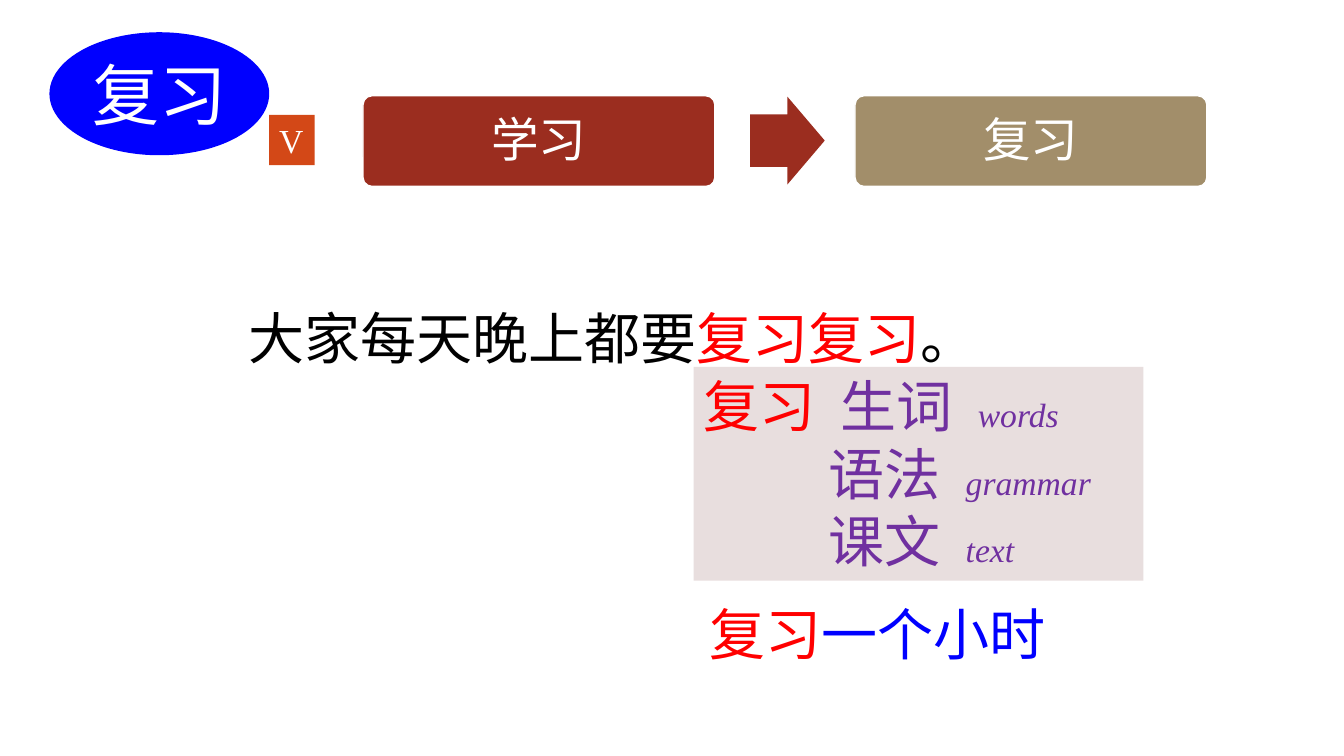
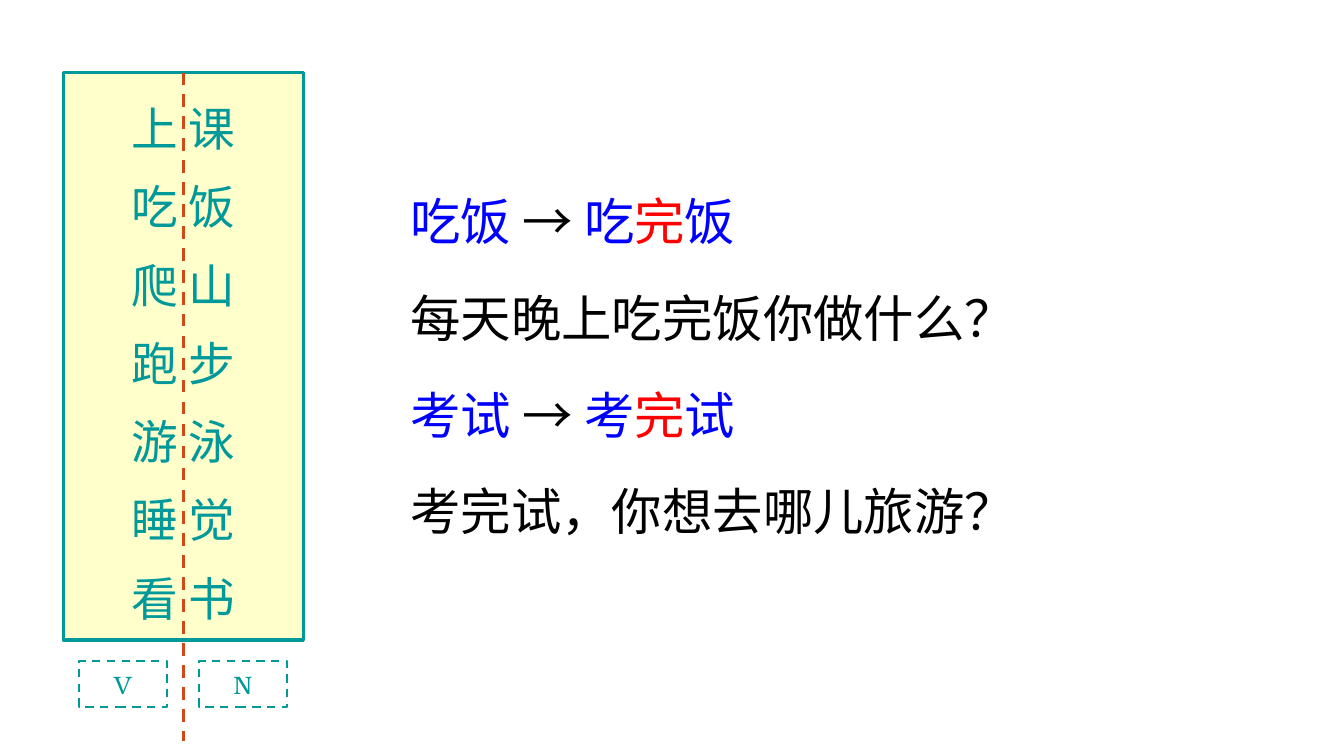
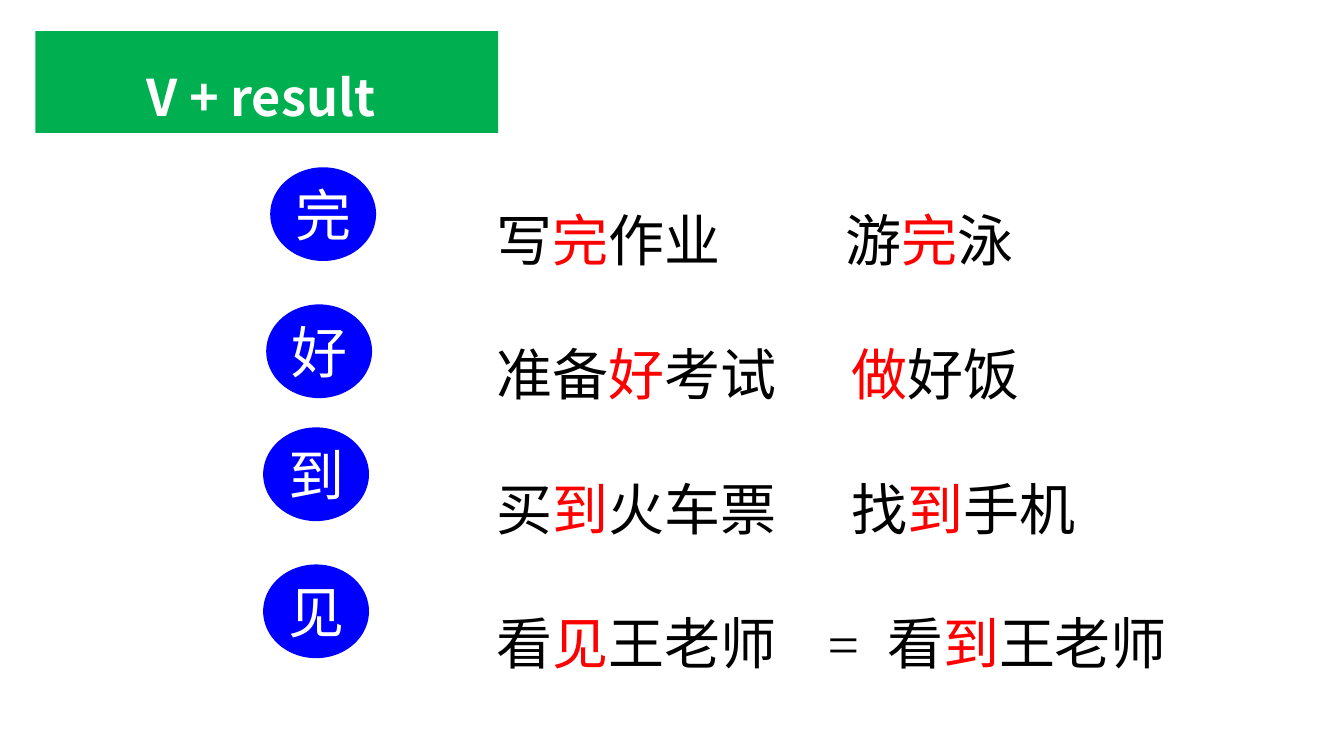
from lxml.etree import SubElement
from pptx import Presentation
from pptx.dml.color import RGBColor
from pptx.enum.dml import MSO_LINE_DASH_STYLE as Dash
from pptx.enum.shapes import MSO_CONNECTOR as Connector, MSO_SHAPE as Preset
from pptx.enum.text import MSO_ANCHOR as Anchor, MSO_AUTO_SIZE as AutoSize, PP_ALIGN as Align
from pptx.oxml.ns import qn
from pptx.util import Emu, Pt

PX = 9144
LINE_HEIGHT = 1.2
SANS, SERIF, ROMAN = "Noto Sans CJK SC", "Times New Roman", "TeX Gyre Bonum"
BLACK, WHITE, RED, BLUE, PURPLE = "000000", "FFFFFF", "FF0000", "0000FF", "7030A0"
BRICK, SAND, ORANGE, GREEN = "9B2D1F", "A28E6A", "D34817", "00B050"
ROSE, TEAL, CREAM = "E8DEDE", "009999", "FFFFCC"


def px(length):
    return Emu(length * PX)


def rgb(value):
    return RGBColor.from_string(value)


def move(shape, box):
    shape.left, shape.top, shape.width, shape.height = map(px, box)


def paint(shape, fill=None, line=None, weight=1, dash=None):
    if fill:
        shape.fill.solid()
        shape.fill.fore_color.rgb = rgb(fill)
    else:
        shape.fill.background()
    if line:
        shape.line.color.rgb = rgb(line)
        shape.line.width = Pt(weight)
        if dash:
            shape.line.dash_style = dash
    else:
        shape.line.fill.background()


def add_shape(page, preset, box, **look):
    shape = page.shapes.add_shape(preset, *map(px, box))
    shape.shadow.inherit = False
    paint(shape, **look)
    return shape


def add_text(page, box, lines, **style):
    write(page.shapes.add_textbox(*map(px, box)), lines, **style)


def add_span(para, text, color, size, font, bold=False, italic=False):
    span = para.add_run()
    span.text = text
    span.font.size = Pt(size)
    span.font.bold = bold
    span.font.italic = italic
    span.font.color.rgb = rgb(color)
    span.font.name = font
    SubElement(span.font._element, qn("a:ea"), typeface=SANS)


def clear_bullet(para):
    props = para._p.get_or_add_pPr()
    props.set("marL", "0")
    props.set("indent", "0")
    SubElement(props, qn("a:buNone"))


def set_tabs(para, stops):
    tabs = SubElement(para._p.get_or_add_pPr(), qn("a:tabLst"))
    for stop in stops:
        SubElement(tabs, qn("a:tab"), pos=str(px(stop)), algn="l")


def write(shape, lines, size=40, color=BLACK, font=SERIF, bold=False, align=Align.LEFT,
          anchor=Anchor.TOP, spacing=None, tabs=None, wrap=True):
    frame = shape.text_frame
    frame.auto_size = AutoSize.NONE
    frame.word_wrap = wrap
    frame.vertical_anchor = anchor
    frame.margin_left = frame.margin_right = px(10)
    frame.margin_top = frame.margin_bottom = px(5)
    for index, line in enumerate(lines):
        para = frame.add_paragraph() if index else frame.paragraphs[0]
        para.alignment = align
        para.space_before = para.space_after = Pt(0)
        if spacing:
            para.line_spacing = Pt(round(size * LINE_HEIGHT * spacing, 1))
        if shape.is_placeholder:
            clear_bullet(para)
        if tabs:
            set_tabs(para, tabs[index])
        for text, *extra in line:
            tint = extra[0] if extra else color
            small = extra[1] if len(extra) > 1 else None
            add_span(para, text, tint, small or size, font, bold, bool(small))


def label(shape, text, size, color=WHITE, font=SANS, spacing=None):
    write(shape, [[(text,)]], size=size, color=color, font=font, spacing=spacing,
          align=Align.CENTER, anchor=Anchor.MIDDLE)


def add_oval(page, box, text, size):
    label(add_shape(page, Preset.OVAL, box, fill=BLUE), text, size)


def step_flow(page, box, steps):
    left, top, width, height = box
    step_width = 349
    pitch = width - step_width
    for index, (text, fill) in enumerate(steps):
        step = add_shape(page, Preset.ROUNDED_RECTANGLE,
                         (left + index * pitch, top, step_width, height), fill=fill, line=WHITE)
        step.adjustments[0] = 0.1
        label(step, text, 34, spacing=0.9)
    arrow = add_shape(page, Preset.RIGHT_ARROW, (left + step_width + 35, top + 1, 74, 87), fill=BRICK)
    arrow.adjustments[0] = 0.6


def review_page(page):
    add_oval(page, (49, 32, 218, 122), "复习", 48)
    add_text(page, (237, 256, 1037, 120),
             [[("大家每天晚上都要",), ("复习复习", RED), ("。",)]], spacing=1.6)
    add_text(page, (694, 590, 357, 77), [[("复习", RED), ("一个小时", BLUE)]], spacing=1)
    step_flow(page, (360, 95, 837, 90), [("学习", BRICK), ("复习", SAND)])
    panel = add_shape(page, Preset.RECTANGLE, (688, 364, 446, 212), fill=ROSE)
    write(panel, [
        [("复习\t", RED), ("生词\t",), ("words", PURPLE, 24)],
        [("\t语法\t",), ("grammar", PURPLE, 24)],
        [("\t课文\t",), ("text", PURPLE, 24)],
    ], color=PURPLE, spacing=1, tabs=[(136, 272), (124, 260), (124, 260)])
    tag = add_shape(page, Preset.RECTANGLE, (267, 114, 45, 50), fill=ORANGE)
    write(tag, [[("V",)]], size=24, color=WHITE, wrap=False)


def verb_list(page, box, words):
    left, top, width, height = box
    body = page.placeholders[1]
    move(body, box)
    paint(body, fill=CREAM, line=TEAL, weight=2.25)
    write(body, [[(word,)] for word in words], size=33.3, color=TEAL,
          font=SANS, align=Align.CENTER, spacing=1.4)
    for index, text in enumerate("VN"):
        key = add_shape(page, Preset.RECTANGLE, (left + 15 + index * 119, top + height + 21, 88, 45),
                        line=TEAL, weight=1.5, dash=Dash.DASH)
        label(key, text, 18, TEAL, ROMAN)
    middle = left + width // 2
    divider = page.shapes.add_connector(
        Connector.STRAIGHT, px(middle), px(top), px(middle), px(top + height + 100))
    divider.line.color.rgb = rgb(ORANGE)
    divider.line.width = Pt(2.25)
    divider.line.dash_style = Dash.DASH
    SubElement(divider._element.spPr, qn("a:effectLst"))


def finish_pattern(verb, noun):
    return [(verb + noun, BLUE), (" → ",), (verb, BLUE), ("完", RED), (noun, BLUE)]


def separable_verbs_page(page):
    title = page.shapes.title._element
    title.getparent().remove(title)
    add_text(page, (397, 148, 742, 395), [
        finish_pattern("吃", "饭"),
        [("每天晚上吃完饭你做什么？",)],
        finish_pattern("考", "试"),
        [("考完试，你想去哪儿旅游？",)],
    ], size=36, spacing=1.6)
    verb_list(page, (63, 72, 238, 563),
              ["上 课", "吃 饭", "爬 山", "跑 步", "游 泳", "睡 觉", "看 书"])


def result_page(page):
    title = page.shapes.title
    move(title, (35, 31, 459, 101))
    paint(title, fill=GREEN)
    write(title, [[("V + result ",)]], size=36, color=WHITE, font=SANS, bold=True,
          align=Align.CENTER, spacing=1.5)
    add_text(page, (483, 132, 757, 543), [
        [("写",), ("完", RED), ("作业\t游",), ("完", RED), ("泳",)],
        [("准备",), ("好", RED), ("考试\t",), ("做", RED), ("好饭",)],
        [("买",), ("到", RED), ("火车票\t找",), ("到", RED), ("手机",)],
        [("看",), ("见", RED), ("王老师\t=\t看",), ("到", RED), ("王老师",)],
    ], spacing=2, tabs=[(346,), (352,), (352,), (328, 387)])
    for text, left, top in [("完", 268, 166), ("好", 264, 302), ("到", 261, 424), ("见", 261, 560)]:
        add_oval(page, (left, top, 105, 93), text, 40)


def main():
    deck = Presentation()
    deck.slide_width, deck.slide_height = px(1333), px(750)
    title_and_body, title_only, blank = [deck.slide_layouts[index] for index in (1, 5, 6)]
    for layout, build in [(blank, review_page), (title_and_body, separable_verbs_page),
                          (title_only, result_page)]:
        build(deck.slides.add_slide(layout))
    deck.save("out.pptx")


if __name__ == "__main__":
    main()
